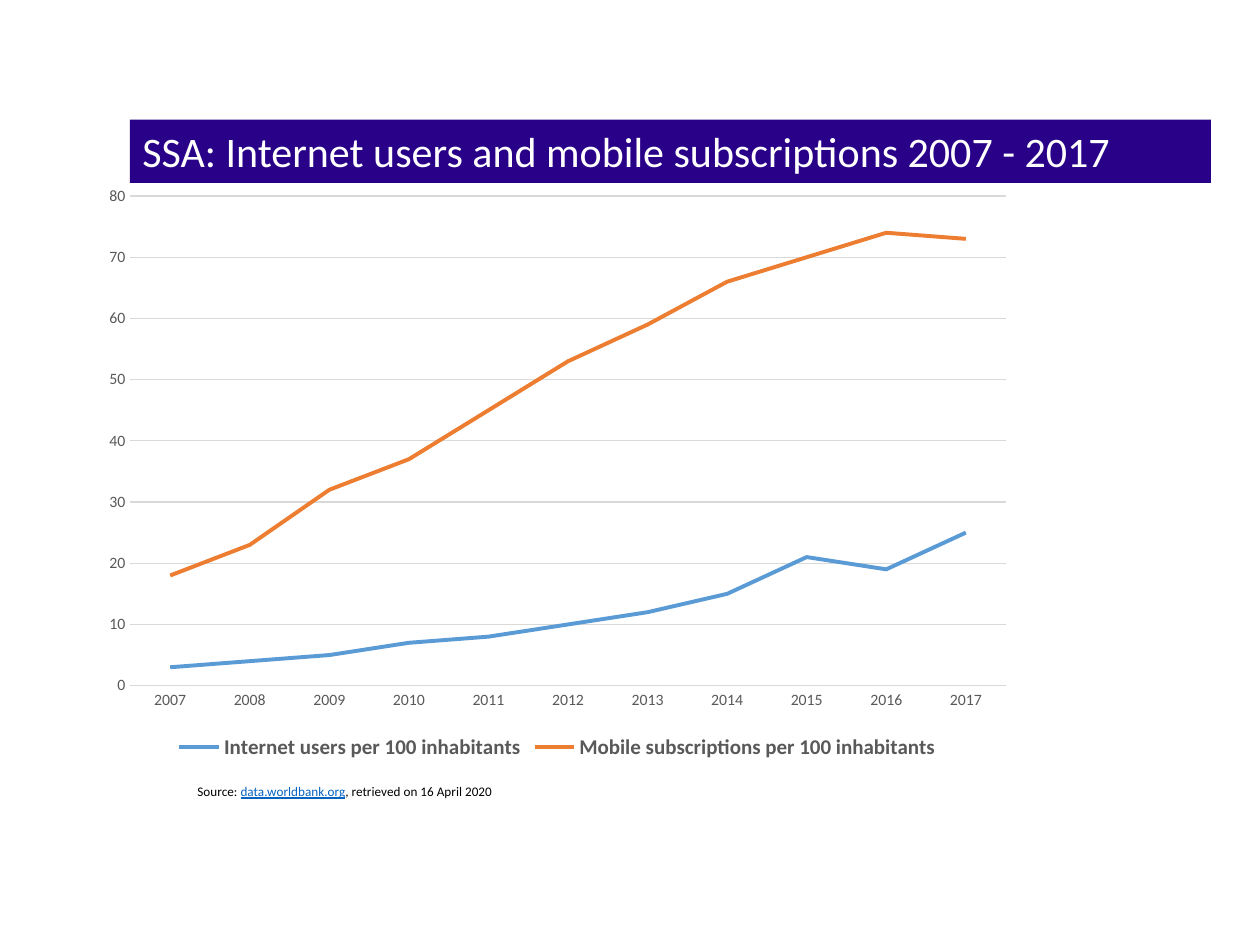
from pptx import Presentation
from pptx.chart.data import CategoryChartData
from pptx.dml.color import RGBColor
from pptx.enum.chart import XL_CHART_TYPE, XL_LEGEND_POSITION, XL_TICK_MARK
from pptx.enum.shapes import MSO_SHAPE
from pptx.enum.text import MSO_ANCHOR, PP_ALIGN
from pptx.util import Cm, Pt

COLOURS = {
    "banner": "290088",
    "banner text": "FFFFFF",
    "source": "000000",
    "link": "0563C1",
    "label": "595959",
    "grid": "D9D9D9",
    "internet": "5B9BD5",
    "mobile": "ED7D31",
}


def colour(key):
    return RGBColor.from_string(COLOURS[key])


def style_font(font, key, **values):
    font.name = "Calibri"
    font.color.rgb = colour(key)
    for attribute, value in values.items():
        setattr(font, attribute, value)


presentation = Presentation()
presentation.slide_width = Cm(25.4)
presentation.slide_height = Cm(19.05)
slide = presentation.slides.add_slide(presentation.slide_layouts[6])

# Source line
source = slide.shapes.add_textbox(Cm(3.73), Cm(15.67), Cm(16.51), Cm(0.89)).text_frame
source.word_wrap = True
for wording, key, underline in (
    ("Source: ", "source", False),
    ("data.worldbank.org", "link", True),
    (", retrieved on 16 April 2020", "source", False),
):
    run = source.paragraphs[0].add_run()
    run.text = wording
    style_font(run.font, key, size=Pt(7.5), underline=underline)

# Line chart
usage = CategoryChartData()
usage.categories = [str(year) for year in range(2007, 2018)]
usage.add_series("Internet users per 100 inhabitants",
                 (3, 4, 5, 7, 8, 10, 12, 15, 21, 19, 25))
usage.add_series("Mobile subscriptions per 100 inhabitants",
                 (18, 23, 32, 37, 45, 53, 59, 66, 70, 74, 73))
chart = slide.shapes.add_chart(
    XL_CHART_TYPE.LINE, Cm(1.83), Cm(3.53), Cm(18.82), Cm(11.89), usage
).chart
chart.has_title = False
style_font(chart.font, "label", size=Pt(10))
chart.plots[0].vary_by_categories = False

for series, key in zip(chart.plots[0].series, ("internet", "mobile")):
    series.smooth = False
    series.format.line.color.rgb = colour(key)
    series.format.line.width = Pt(2.25)

years, rates = chart.category_axis, chart.value_axis
for axis in (years, rates):
    axis.major_tick_mark = axis.minor_tick_mark = XL_TICK_MARK.NONE
    style_font(axis.tick_labels.font, "label", size=Pt(9))
for attribute, value in {"minimum_scale": 0, "maximum_scale": 80, "major_unit": 10}.items():
    setattr(rates, attribute, value)
rates.format.line.fill.background()
for line in (years.format.line, rates.major_gridlines.format.line):
    line.color.rgb = colour("grid")
    line.width = Pt(0.75)

chart.has_legend = True
chart.legend.position = XL_LEGEND_POSITION.BOTTOM
chart.legend.include_in_layout = False
style_font(chart.legend.font, "label", size=Pt(12), bold=True)

# Title banner
banner = slide.shapes.add_shape(
    MSO_SHAPE.RECTANGLE, Cm(2.62), Cm(2.41), Cm(21.79), Cm(1.28)
)
banner.shadow.inherit = False
banner.fill.solid()
banner.fill.fore_color.rgb = colour("banner")
banner.line.fill.background()
banner.text_frame.word_wrap = True
banner.text_frame.vertical_anchor = MSO_ANCHOR.TOP
title = banner.text_frame.paragraphs[0]
title.alignment = PP_ALIGN.LEFT
title.text = "SSA: Internet users and mobile subscriptions 2007 - 2017"
style_font(title.runs[0].font, "banner text", size=Pt(24))

presentation.save("out.pptx")
